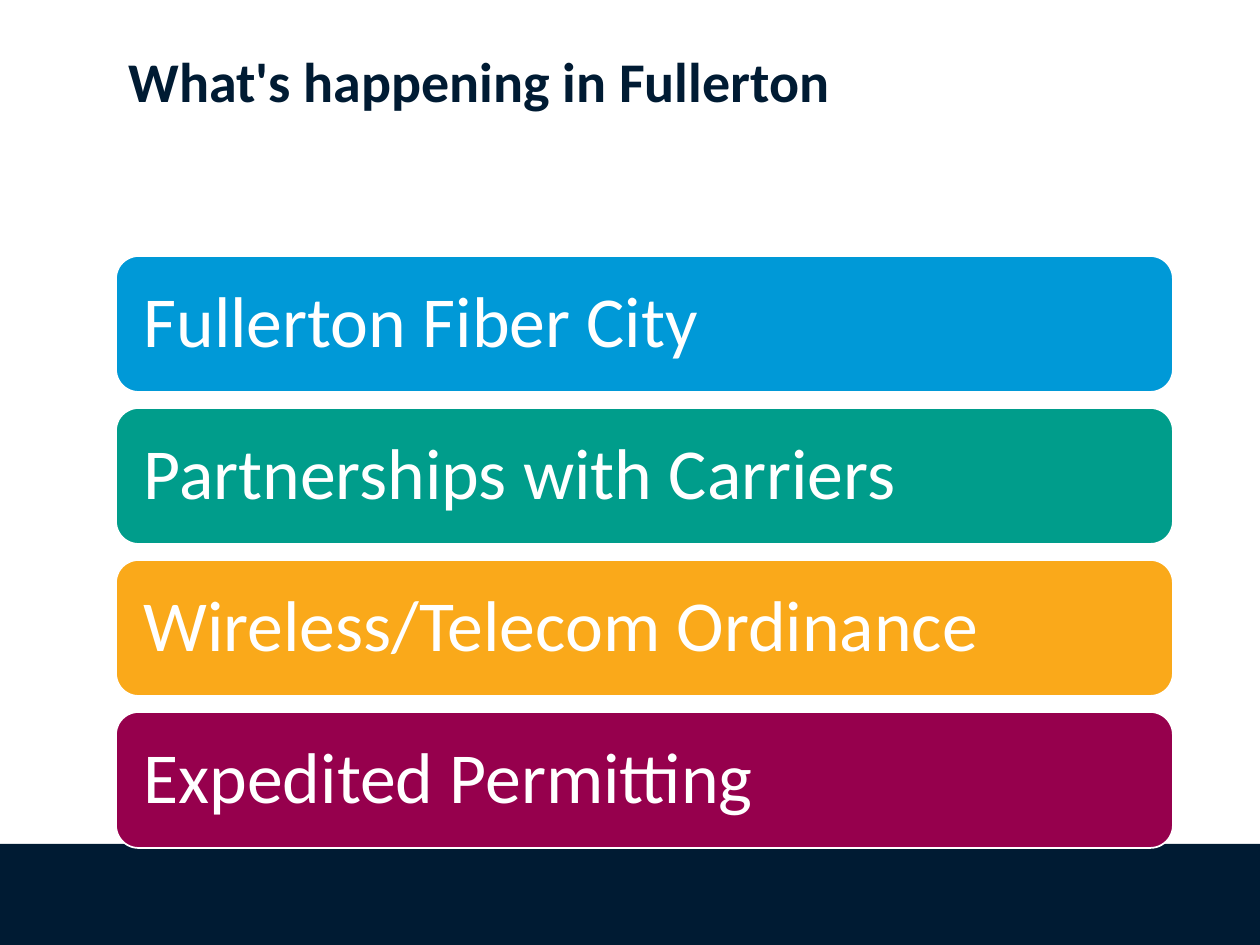
from pptx import Presentation, util as u
from pptx.dml.color import RGBColor
from pptx.enum import shapes, text

PX = u.Inches(1) // 126
NAVY, WHITE = "001B33", "FFFFFF"
TOPICS = [
    ("Fullerton Fiber City", "0099D7"),
    ("Partnerships with Carriers", "009D8B"),
    ("Wireless/Telecom Ordinance", "FAA91A"),
    ("Expedited Permitting", "96004D"),
]


def color(value):
    return RGBColor.from_string(value)


def assign(target, values):
    for name, value in values.items():
        setattr(target, name, value)


class SlideBuilder:
    """Hold the text style and the current slide, and add its elements."""

    def __init__(self, slide, font="Calibri"):
        self.slide = slide
        self.font = font

    def label(self, box, words, size, ink, bold, frame):
        assign(box.text_frame, {"word_wrap": True, **frame})
        para = box.text_frame.paragraphs[0]
        assign(para, {"line_spacing": 0.9, "alignment": text.PP_ALIGN.LEFT})
        span = para.add_run()
        span.text = words
        assign(span.font, {"name": self.font, "size": u.Pt(size), "bold": bold})
        span.font.color.rgb = color(ink)

    def panel(self, kind, place, fill, line=None):
        panel = self.slide.shapes.add_shape(kind, *(n * PX for n in place))
        panel.shadow.inherit = False
        panel.fill.solid()
        panel.fill.fore_color.rgb = color(fill)
        if line:
            panel.line.color.rgb = color(line)
            panel.line.width = u.Pt(1)
        else:
            panel.line.fill.background()
        return panel

    def title(self, place, words):
        box = self.slide.shapes.add_textbox(*(n * PX for n in place))
        frame = {"vertical_anchor": text.MSO_ANCHOR.TOP}
        self.label(box, words, 32, NAVY, True, frame)

    def card(self, place, words, fill):
        kind = shapes.MSO_SHAPE.ROUNDED_RECTANGLE
        card = self.panel(kind, place, fill, WHITE)
        sides = ("left", "top", "right", "bottom")
        frame = {f"margin_{side}": 21 * PX for side in sides}
        frame["vertical_anchor"] = text.MSO_ANCHOR.MIDDLE
        self.label(card, words, 41, WHITE, False, frame)


def main():
    deck = Presentation()
    assign(deck, {"slide_width": 1260 * PX, "slide_height": 945 * PX})
    page = SlideBuilder(deck.slides.add_slide(deck.slide_layouts[6]))
    page.panel(shapes.MSO_SHAPE.RECTANGLE, (0, 844, 1260, 101), NAVY)
    page.title((116, 48, 1023, 204), "What's happening in Fullerton")
    for row, (words, fill) in enumerate(TOPICS):
        page.card((116, 256 + 152 * row, 1057, 136), words, fill)
    deck.save("out.pptx")


if __name__ == "__main__":
    main()
